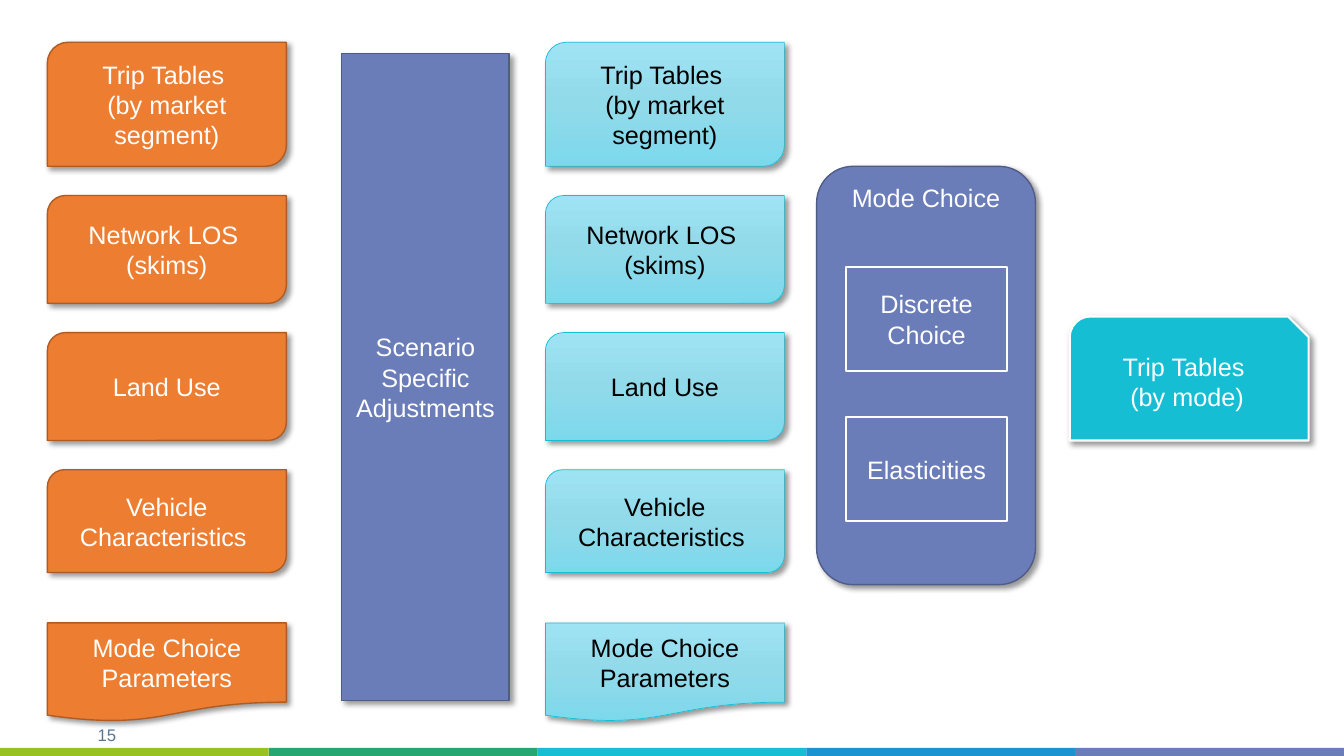
from copy import deepcopy

from lxml import etree
from pptx import Presentation
from pptx import util as u
from pptx.dml.color import RGBColor
from pptx.enum import shapes, text
from pptx.oxml.ns import qn

COLORS = {
    "white": "FFFFFF", "black": "000000", "page": "597794",
    "green": "98C21F", "teal": "26A771", "cyan": "16BED4", "blue": "1C93D1",
    "violet": "6B7DB8", "violet_edge": "4F5C88",
    "orange": "ED7D31", "orange_edge": "AF5C24",
    "sky_top": "9EE3F3", "sky_mid": "91DAEA", "sky_low": "7CD9EC",
}
SKY = ["sky_top", "sky_mid", "sky_low"]
KIND = shapes.MSO_SHAPE


def rgb(name):
    return RGBColor.from_string(COLORS[name])


class FlowSlide:
    font = "Arial"

    def __init__(self, prs):
        self.slide = prs.slides.add_slide(prs.slide_layouts[6])

    def add_lines(self, frame, lines, color, size=18):
        for i, line in enumerate(lines):
            para = frame.paragraphs[0] if i == 0 else frame.add_paragraph()
            para.alignment = text.PP_ALIGN.CENTER
            run = para.add_run()
            run.text = line
            run.font.name = self.font
            run.font.size = u.Pt(size)
            run.font.color.rgb = rgb(color)

    def label(self, at, line, color, size):
        frame = self.slide.shapes.add_textbox(*map(u.Inches, at)).text_frame
        frame.word_wrap = True
        self.add_lines(frame, [line], color, size)

    def gradient(self, shape, names):
        shape.fill.gradient()
        shape.fill.gradient_angle = 270
        stops = shape._element.spPr.find(".//" + qn("a:gsLst"))
        stops.append(deepcopy(stops[-1]))
        for i, (stop, name) in enumerate(zip(shape.fill.gradient_stops, names)):
            stop.position = i / (len(names) - 1)
            stop.color.rgb = rgb(name)

    def cast_shadow(self, shape):
        effects = shape._element.spPr.find(qn("a:effectLst"))
        shadow = etree.SubElement(
            effects, qn("a:outerShdw"), blurRad=str(u.Pt(4)), dist=str(u.Pt(3)),
            dir="2700000", algn="tl", rotWithShape="0")
        tone = etree.SubElement(shadow, qn("a:srgbClr"), val=COLORS["black"])
        etree.SubElement(tone, qn("a:alpha"), val="40000")

    def box(self, kind, at, fill, lines=(), edge=None, width=1.0,
            ink="white", shadow=True, anchor=text.MSO_ANCHOR.MIDDLE):
        shape = self.slide.shapes.add_shape(kind, *map(u.Inches, at))
        shape.shadow.inherit = False
        if isinstance(fill, list):
            self.gradient(shape, fill)
        else:
            shape.fill.solid()
            shape.fill.fore_color.rgb = rgb(fill)
        if edge:
            shape.line.color.rgb = rgb(edge)
            shape.line.width = u.Pt(width)
        else:
            shape.line.fill.background()
        if shadow:
            self.cast_shadow(shape)
        shape.text_frame.word_wrap = True
        shape.text_frame.vertical_anchor = anchor
        self.add_lines(shape.text_frame, lines, ink)


def main():
    prs = Presentation()
    prs.slide_width, prs.slide_height = u.Inches(13.33), u.Inches(7.5)
    flow = FlowSlide(prs)

    flow.label((0.74, 7.14, 0.64, 0.3), "15", "page", 12)
    stripes = ["green", "teal", "cyan", "blue", "violet"]
    stripe_width = 13.33 / len(stripes)
    for i, stripe in enumerate(stripes):
        flow.box(KIND.RECTANGLE, (i * stripe_width, 7.42, stripe_width, 0.1),
                 stripe, shadow=False)

    data, document = KIND.ROUND_2_DIAG_RECTANGLE, KIND.FLOWCHART_DOCUMENT
    inputs = [
        (data, 0.42, 1.23, ["Trip Tables ", "(by market segment)"]),
        (data, 1.94, 1.07, ["Network LOS ", "(skims)"]),
        (data, 3.3, 1.07, ["Land Use"]),
        (data, 4.66, 1.02, ["Vehicle Characteristics "]),
        (document, 6.18, 0.98, ["Mode Choice Parameters"]),
    ]
    columns = [
        (0.47, "orange", "orange_edge", 1, "white"),
        (5.41, SKY, "cyan", 0.5, "black"),
    ]
    for left, fill, edge, width, ink in columns:
        for kind, top, height, lines in inputs:
            flow.box(kind, (left, top, 2.37, height), fill, lines, edge, width, ink)

    flow.box(KIND.RECTANGLE, (3.39, 0.53, 1.66, 6.42), "violet",
             ["Scenario Specific Adjustments"], "violet_edge")
    flow.box(KIND.ROUNDED_RECTANGLE, (8.1, 1.65, 2.17, 4.15), "violet",
             ["Mode Choice"], "violet_edge", anchor=text.MSO_ANCHOR.TOP)
    for top, method in [(2.65, "Discrete Choice"), (4.14, "Elasticities")]:
        flow.box(KIND.RECTANGLE, (8.39, top, 1.6, 1.03), "violet", [method],
                 "white", 1.5, shadow=False)
    flow.box(KIND.SNIP_ROUND_RECTANGLE, (10.61, 3.14, 2.37, 1.23), "cyan",
             ["Trip Tables ", "(by mode)"], "white", 1.5)

    prs.save("out.pptx")


if __name__ == "__main__":
    main()
